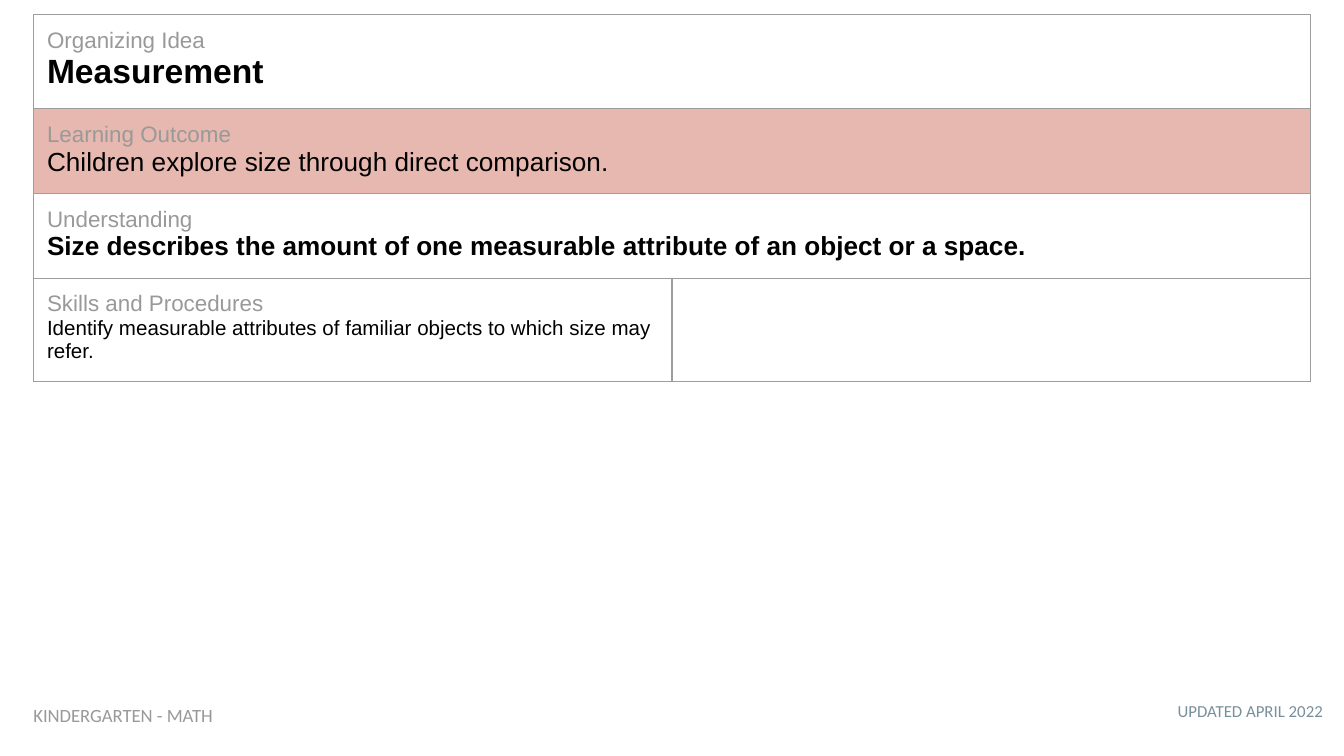
from lxml import etree
from pptx import Presentation
from pptx import util as u
from pptx.dml.color import RGBColor
from pptx.enum import text
from pptx.oxml import ns

WIDTH = 10
HEIGHT = WIDTH * 9 / 16
MARGIN = 0.25
TABLE_TOP = 0.11
COLUMNS = 2
INSET = 0.1
GREY, BLACK, BORDER = "999999", "000000", "9E9E9E"

# label, statement, statement format, row height, fill, one paragraph over all columns
ROWS = [
    ("Organizing Idea", "Measurement",
     {"size": 18, "bold": True}, 0.7, None, True, True),
    ("Learning Outcome", "Children explore size through direct comparison.",
     {"size": 14}, 0.63, "E6B8AF", True, True),
    ("Understanding",
     "Size describes the amount of one measurable attribute of an object or a space.",
     {"size": 14, "bold": True}, 0.63, None, True, False),
    ("Skills and Procedures",
     "Identify measurable attributes of familiar objects to which size may refer.",
     {"size": 11}, 0.77, None, False, False),
]

# wording, left, top, width, height, alignment, format
FOOTERS = [
    ("UPDATED APRIL 2022", 7.24, 5.14, 2.7, 0.35, text.PP_ALIGN.RIGHT,
     {"size": 9, "color": "78909C"}),
    ("KINDERGARTEN - MATH", 0.15, 5.15, 3.01, 0.37, text.PP_ALIGN.LEFT,
     {"size": 10, "color": GREY}),
]


def rgb(value):
    return RGBColor.from_string(value)


def write(paragraph, wording, size, color=BLACK, bold=False, name="Arial"):
    run = paragraph.add_run()
    run.text = wording
    for key, value in {"size": u.Pt(size), "bold": bold, "name": name}.items():
        setattr(run.font, key, value)
    run.font.color.rgb = rgb(color)


def set_insets(target):
    for side in ("left", "right", "top", "bottom"):
        setattr(target, f"margin_{side}", u.Inches(INSET))


def outline(cell):
    properties = cell._tc.get_or_add_tcPr()
    for side in ("lnL", "lnR", "lnT", "lnB"):
        line = etree.SubElement(properties, ns.qn(f"a:{side}"), w=str(u.Pt(0.75)))
        fill = etree.SubElement(line, ns.qn("a:solidFill"))
        etree.SubElement(fill, ns.qn("a:srgbClr"), val=BORDER)


def add_outcomes(slide):
    width = WIDTH - 2 * MARGIN
    height = sum(row[3] for row in ROWS)
    table = slide.shapes.add_table(
        len(ROWS), COLUMNS, *map(u.Inches, (MARGIN, TABLE_TOP, width, height))).table
    table.first_row = table.horz_banding = False
    for column in table.columns:
        column.width = u.Inches(width / COLUMNS)

    for index, (label, statement, style, row_height, fill, spans, joined) in enumerate(ROWS):
        row = table.rows[index]
        row.height = u.Inches(row_height)
        for cell in row.cells:
            set_insets(cell)
            outline(cell)
            if fill:
                cell.fill.solid()
                cell.fill.fore_color.rgb = rgb(fill)
            else:
                cell.fill.background()
        first = table.cell(index, 0)
        if spans:
            first.merge(table.cell(index, COLUMNS - 1))
        paragraph = first.text_frame.paragraphs[0]
        write(paragraph, label, 12, GREY)
        if joined:
            paragraph.add_line_break()
        else:
            paragraph = first.text_frame.add_paragraph()
        write(paragraph, statement, **style)


def add_footer(slide, wording, left, top, width, height, alignment, style):
    frame = slide.shapes.add_textbox(
        *map(u.Inches, (left, top, width, height))).text_frame
    set_insets(frame)
    frame.word_wrap = True
    frame.auto_size = text.MSO_AUTO_SIZE.SHAPE_TO_FIT_TEXT
    frame.paragraphs[0].alignment = alignment
    write(frame.paragraphs[0], wording, name="Calibri", **style)


def main():
    deck = Presentation()
    deck.slide_width, deck.slide_height = u.Inches(WIDTH), u.Inches(HEIGHT)
    slide = deck.slides.add_slide(deck.slide_layouts[6])
    add_outcomes(slide)
    for footer in FOOTERS:
        add_footer(slide, *footer)
    deck.save("out.pptx")


if __name__ == "__main__":
    main()
